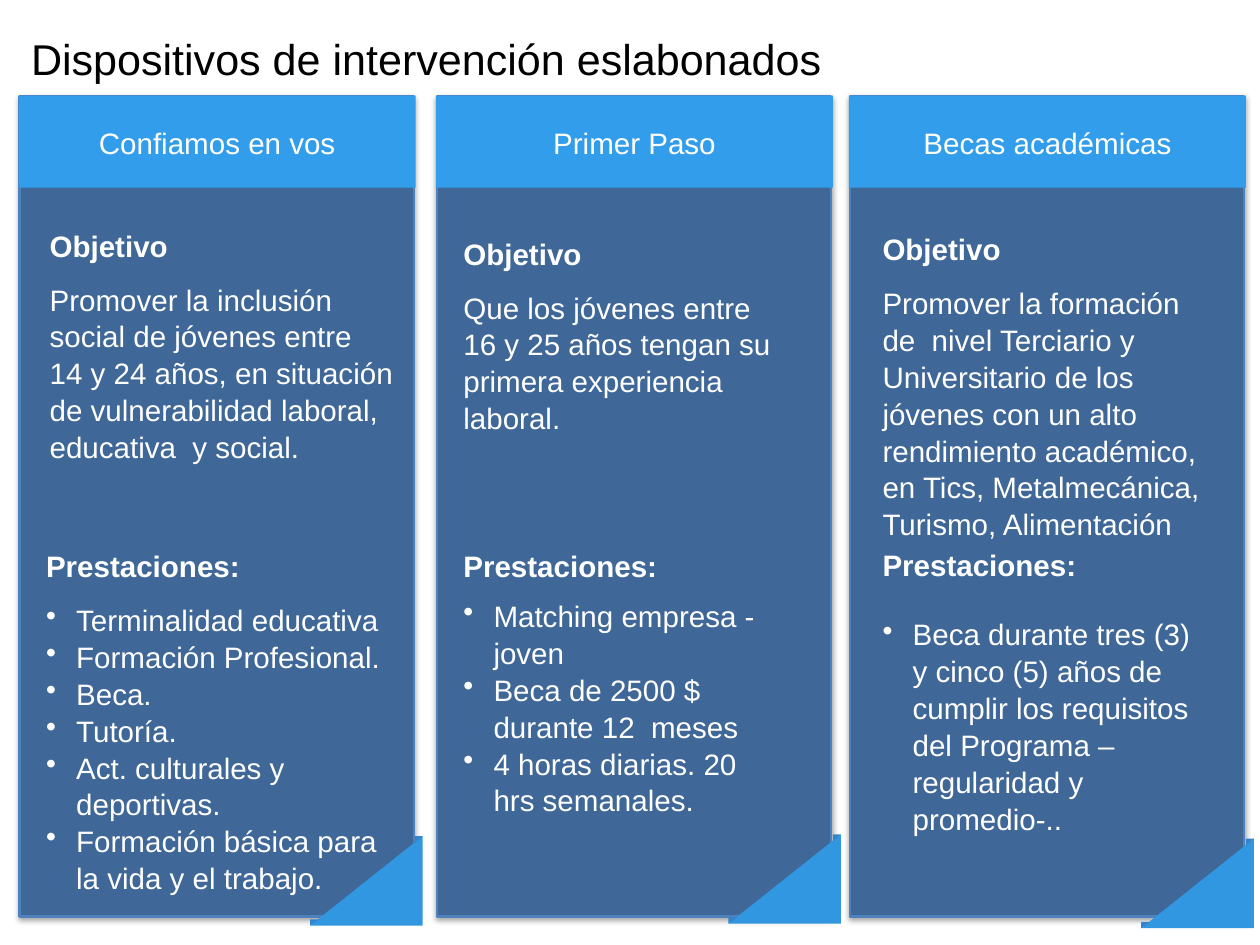
"""Build a slide of three linked youth programmes."""
import pptx
import pptx.util
import pptx.dml.color
import pptx.enum.shapes
import pptx.enum.text
import pptx.oxml.ns
import lxml.etree

Inches = pptx.util.Inches
Pt = pptx.util.Pt
RGBColor = pptx.dml.color.RGBColor
ALIGN = pptx.enum.text.PP_ALIGN
ANCHOR = pptx.enum.text.MSO_ANCHOR
RECT = pptx.enum.shapes.MSO_SHAPE.RECTANGLE

BLACK = RGBColor(0x00, 0x00, 0x00)
WHITE = RGBColor(0xFF, 0xFF, 0xFF)
NAVY = RGBColor(0x3F, 0x67, 0x97)
EDGE = RGBColor(0x4F, 0x81, 0xBD)
SKY = RGBColor(0x32, 0x9D, 0xEA)
FOLD = RGBColor(0x31, 0x97, 0xE0)
SHADE = RGBColor(0x34, 0x84, 0xC9)

TOP = 1.08
CARDS = [
    {
        "name": "Confiamos en vos", "left": 0.21, "fold": (3.5, 9.44),
        "goal": "Promover la inclusión social de jóvenes entre  14 y 24 años, "
                "en situación de vulnerabilidad laboral, educativa  y social.",
        "goal_box": (0.49, 2.49, 4.02, 3.12), "goal_gap": 13.5,
        "perks": ["Terminalidad educativa", "Formación Profesional.", "Beca.", "Tutoría.",
                  "Act. culturales y deportivas.",
                  "Formación básica para la vida y el trabajo."],
        "perk_box": (0.45, 6.1, 4.06, 3.97), "perk_gap": 14.3,
    },
    {
        "name": "Primer Paso", "left": 4.92, "fold": (8.22, 9.42),
        "goal": "Que los jóvenes entre 16 y 25 años tengan su primera "
                "experiencia laboral.",
        "goal_box": (5.16, 2.58, 3.76, 2.66), "goal_gap": 13.5,
        "perks": ["Matching empresa - joven", "Beca de 2500 $ durante 12  meses",
                  "4 horas diarias. 20 hrs semanales."],
        "perk_box": (5.16, 6.1, 3.76, 3.11), "perk_gap": 11,
    },
    {
        "name": "Becas académicas", "left": 9.58, "fold": (12.88, 9.47),
        "goal": "Promover la formación de  nivel Terciario y Universitario de los "
                "jóvenes con un alto rendimiento académico, en Tics, Metalmecánica, "
                "Turismo, Alimentación",
        "goal_box": (9.89, 2.52, 3.87, 3.55), "goal_gap": 14.3,
        "perks": ["Beca durante tres (3) y cinco (5) años de cumplir los requisitos "
                  "del Programa –regularidad y promedio-.."],
        "perk_box": (9.89, 6.09, 3.76, 3.31), "perk_gap": 26.5,
    },
]
FOLDS = [
    (FOLD, [(1.27, 0), (1.27, 1.01), (0, 1.01)]),
    (SHADE, [(0.1, 0.94), (0, 0.94), (0, 1.01)]),
    (SHADE, [(1.18, 0.08), (1.18, 0), (1.27, 0)]),
]


def write(frame, words, size=24, color=WHITE, bold=False, align=ALIGN.LEFT,
          gap=0, pitch=1.04, bullet=False):
    """Add one formatted paragraph to a text frame."""
    par = frame.add_paragraph() if frame.text else frame.paragraphs[0]
    par.alignment = align
    par.line_spacing = pitch
    par.space_before = Pt(gap)
    run = par.add_run()
    run.text = words
    run.font.name = "Arial"
    run.font.size = Pt(size)
    run.font.bold = bold
    run.font.color.rgb = color
    if bullet:
        props = par._p.get_or_add_pPr()
        props.set("marL", str(Inches(0.34)))
        props.set("indent", str(-Inches(0.34)))
        mark = lxml.etree.SubElement(props, pptx.oxml.ns.qn("a:buChar"))
        mark.set("char", "•")


def pad(frame, inset, anchor=ANCHOR.TOP):
    """Set wrap, margins and anchor of a text frame."""
    frame.word_wrap = True
    frame.vertical_anchor = anchor
    frame.margin_left = frame.margin_right = Inches(inset)
    frame.margin_top = frame.margin_bottom = Inches(inset)


def paint(shape, fill, edge=None):
    """Fill a shape and give it a line or none."""
    shape.shadow.inherit = False
    shape.fill.solid()
    shape.fill.fore_color.rgb = fill
    if edge is None:
        shape.line.fill.background()
    else:
        shape.line.color.rgb = edge
        shape.line.width = Pt(2)


def shadow(shape):
    """Cast a soft shadow below a shape."""
    qn = pptx.oxml.ns.qn
    effects = shape._element.spPr.find(qn("a:effectLst"))
    outer = lxml.etree.SubElement(effects, qn("a:outerShdw"), blurRad=str(Pt(4)),
                                  dist=str(Pt(2)), dir="5400000", rotWithShape="0")
    tone = lxml.etree.SubElement(outer, qn("a:srgbClr"), val=str(BLACK))
    lxml.etree.SubElement(tone, qn("a:alpha"), val="35000")


def block(slide, box, head, items, gap, bullet=False):
    """Add a text box with a bold heading over its items."""
    frame = slide.shapes.add_textbox(*map(Inches, box)).text_frame
    pad(frame, 0.07)
    write(frame, head, bold=True)
    for i, item in enumerate(items):
        write(frame, item, gap=0 if i else gap, bullet=bullet)


def corner(slide, left, top):
    """Draw the folded corner as a group of triangles."""
    group = slide.shapes.add_group_shape()
    for color, points in FOLDS:
        first, *rest = [(Inches(left + x), Inches(top + y)) for x, y in points]
        path = group.shapes.build_freeform(*first)
        path.add_line_segments(rest, close=True)
        paint(path.convert_to_shape(), color)


def card(slide, data):
    """Draw one programme column."""
    left = data["left"]
    panel = slide.shapes.add_shape(RECT, Inches(left + 0.01), Inches(TOP + 0.01),
                                   Inches(4.45), Inches(9.26))
    paint(panel, NAVY, EDGE)
    shadow(panel)
    head = slide.shapes.add_shape(RECT, Inches(left), Inches(TOP),
                                  Inches(4.48), Inches(1.04))
    paint(head, SKY)
    pad(head.text_frame, 0, ANCHOR.MIDDLE)
    write(head.text_frame, data["name"], align=ALIGN.CENTER)
    block(slide, data["goal_box"], "Objetivo", [data["goal"]], data["goal_gap"])
    block(slide, data["perk_box"], "Prestaciones:", data["perks"],
          data["perk_gap"], bullet=True)
    corner(slide, *data["fold"])


def title(slide, words):
    """Place and format the slide title."""
    shape = slide.shapes.title
    shape.left, shape.top = Inches(0.28), Inches(0.3)
    shape.width, shape.height = Inches(9.76), Inches(0.71)
    pad(shape.text_frame, 0.07)
    write(shape.text_frame, words, size=35, color=BLACK, pitch=1)


def main():
    """Build and save the deck."""
    deck = pptx.Presentation()
    deck.slide_width, deck.slide_height = Inches(14.22), Inches(10.67)
    slide = deck.slides.add_slide(deck.slide_layouts[5])
    title(slide, "Dispositivos de intervención eslabonados")
    for data in CARDS:
        card(slide, data)
    deck.save("out.pptx")


if __name__ == "__main__":
    main()
